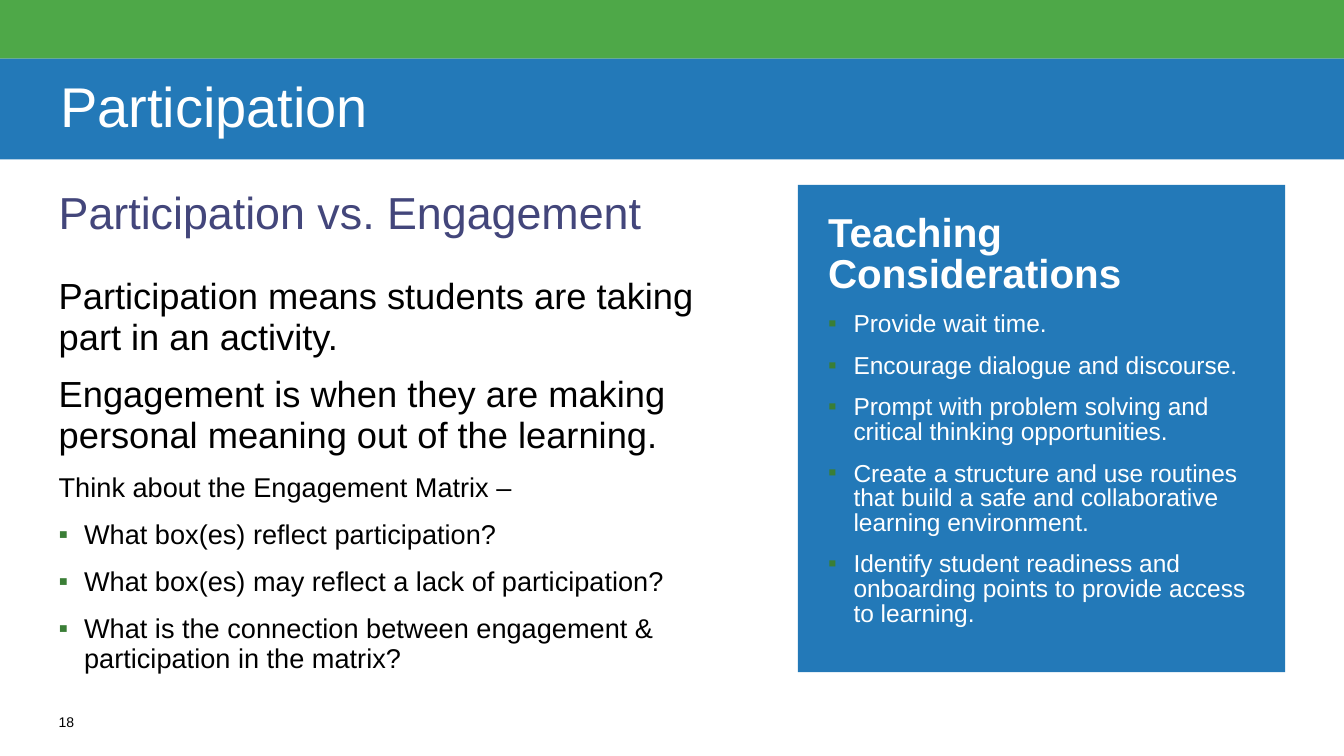
from lxml.etree import SubElement
from pptx import Presentation
from pptx.dml.color import RGBColor
from pptx.enum.shapes import MSO_SHAPE
from pptx.enum.text import MSO_ANCHOR
from pptx.oxml.ns import qn
from pptx.util import Cm, Pt

# Content: (text, style name)
TITLE = [("Participation", "title")]
SUBTITLE = [("Participation vs. Engagement", "subtitle")]
BODY = [
    ("Participation means students are taking part in an activity.", "statement"),
    ("Engagement is when they are making personal meaning out of the learning.", "statement"),
    ("Think about the Engagement Matrix –", "prompt"),
    ("What box(es) reflect participation?", "question"),
    ("What box(es) may reflect a lack of participation?", "question"),
    ("What is the connection between engagement & participation in the matrix?", "question"),
]
PANEL = [
    ("Teaching Considerations", "panel heading"),
    ("Provide wait time.", "consideration"),
    ("Encourage dialogue and discourse.", "consideration"),
    ("Prompt with problem solving and critical thinking opportunities.", "consideration"),
    ("Create a structure and use routines that build a safe and collaborative "
     "learning environment.", "consideration"),
    ("Identify student readiness and onboarding points to provide access to learning.",
     "consideration"),
]
PAGE_NUMBER = [("18", "number")]

# Colours and styles: size, colour, bold, line spacing, bulleted
GREEN, BLUE, BULLET_GREEN = "4EA848", "2379B8", "3A7E36"
WHITE, BLACK, INDIGO = "FFFFFF", "000000", "43467B"
STYLES = {
    "title": (40, WHITE, False, 0.9, False),
    "subtitle": (32, INDIGO, False, 1.0, False),
    "statement": (25.9, BLACK, False, 0.93, False),
    "prompt": (19.4, BLACK, False, 0.93, False),
    "question": (19.4, BLACK, False, 0.93, True),
    "panel heading": (28.8, WHITE, True, 0.84, False),
    "consideration": (17.5, WHITE, False, 0.84, True),
    "number": (10, BLACK, False, 1.0, False),
}

# Layout in centimetres
SLIDE_WIDTH, SLIDE_HEIGHT = 33.87, 19.05
MARGIN = 1.48
BAND_HEIGHT, TITLE_HEIGHT = 1.48, 2.54
CONTENT_TOP = 4.66
PANEL_SIDE = 12.28
PANEL_LEFT = SLIDE_WIDTH - MARGIN - PANEL_SIDE
INDENT = 0.64


def colour(value):
    return RGBColor.from_string(value)


def add_bullet(paragraph):
    properties = paragraph._p.get_or_add_pPr()
    properties.set("marL", str(Cm(INDENT)))
    properties.set("indent", str(-Cm(INDENT)))
    bullet_colour = SubElement(properties, qn("a:buClr"))
    SubElement(bullet_colour, qn("a:srgbClr"), val=BULLET_GREEN)
    SubElement(properties, qn("a:buFont"), typeface="Arial")
    SubElement(properties, qn("a:buChar"), char="▪")


def write(shape, lines, insets=(0, 0), anchor=MSO_ANCHOR.TOP):
    frame = shape.text_frame
    horizontal, vertical = map(Cm, insets)
    frame_format = {
        "word_wrap": True, "vertical_anchor": anchor,
        "margin_left": horizontal, "margin_right": horizontal,
        "margin_top": vertical, "margin_bottom": vertical,
    }
    for name, value in frame_format.items():
        setattr(frame, name, value)
    for index, (text, style) in enumerate(lines):
        size, text_colour, bold, spacing, bulleted = STYLES[style]
        paragraph = frame.paragraphs[0] if index == 0 else frame.add_paragraph()
        paragraph.text = text
        if bulleted:
            add_bullet(paragraph)
        paragraph_format = {
            "alignment": 1, "line_spacing": spacing,
            "space_before": Pt(6 if index else 0),
            "space_after": Pt(6 if len(lines) > 1 else 0),
        }
        for name, value in paragraph_format.items():
            setattr(paragraph, name, value)
        for name, value in {"name": "Arial", "size": Pt(size), "bold": bold}.items():
            setattr(paragraph.font, name, value)
        paragraph.font.color.rgb = colour(text_colour)


def add_block(slide, box, fill):
    shape = slide.shapes.add_shape(MSO_SHAPE.RECTANGLE, *map(Cm, box))
    shape.shadow.inherit = False
    shape.fill.solid()
    shape.fill.fore_color.rgb = colour(fill)
    shape.line.fill.background()
    return shape


def main():
    presentation = Presentation()
    presentation.slide_width = Cm(SLIDE_WIDTH)
    presentation.slide_height = Cm(SLIDE_HEIGHT)
    slide = presentation.slides.add_slide(presentation.slide_layouts[6])

    # Header bands
    add_block(slide, (0, 0, SLIDE_WIDTH, BAND_HEIGHT), GREEN)
    title = add_block(slide, (0, BAND_HEIGHT, SLIDE_WIDTH, TITLE_HEIGHT), BLUE)
    write(title, TITLE, (1.52, 0), MSO_ANCHOR.MIDDLE)

    # Left column and page number
    text_boxes = [
        ((MARGIN, CONTENT_TOP, 16.72, 1.38), SUBTITLE),
        ((MARGIN, 6.99, 17.36, 10.58), BODY),
        ((MARGIN, 17.99, 1.06, 0.64), PAGE_NUMBER),
    ]
    for box, lines in text_boxes:
        write(slide.shapes.add_textbox(*map(Cm, box)), lines)

    # Teaching panel
    panel = add_block(slide, (PANEL_LEFT, CONTENT_TOP, PANEL_SIDE, PANEL_SIDE), BLUE)
    write(panel, PANEL, (0.76, 0.76))

    presentation.save("out.pptx")


if __name__ == "__main__":
    main()
